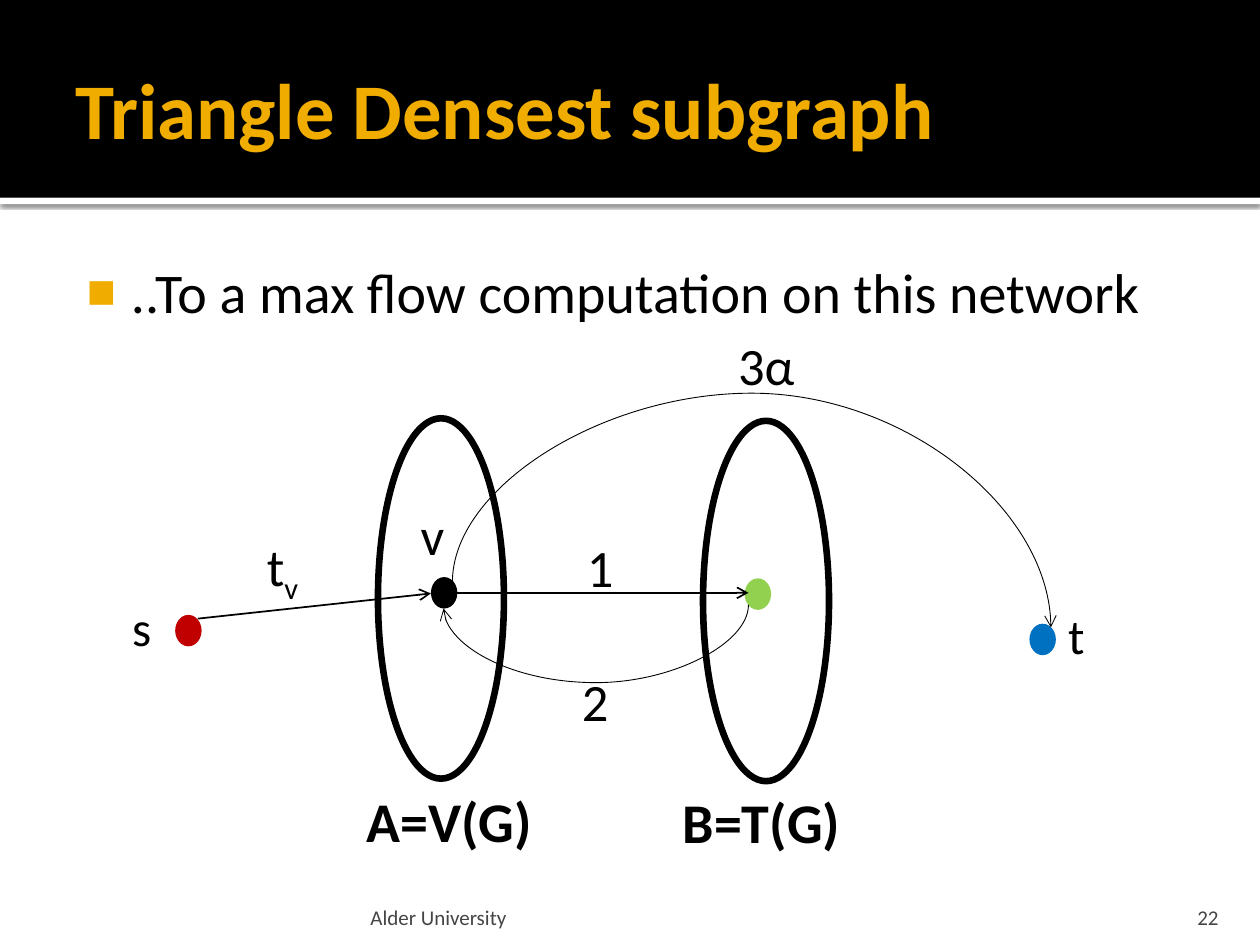
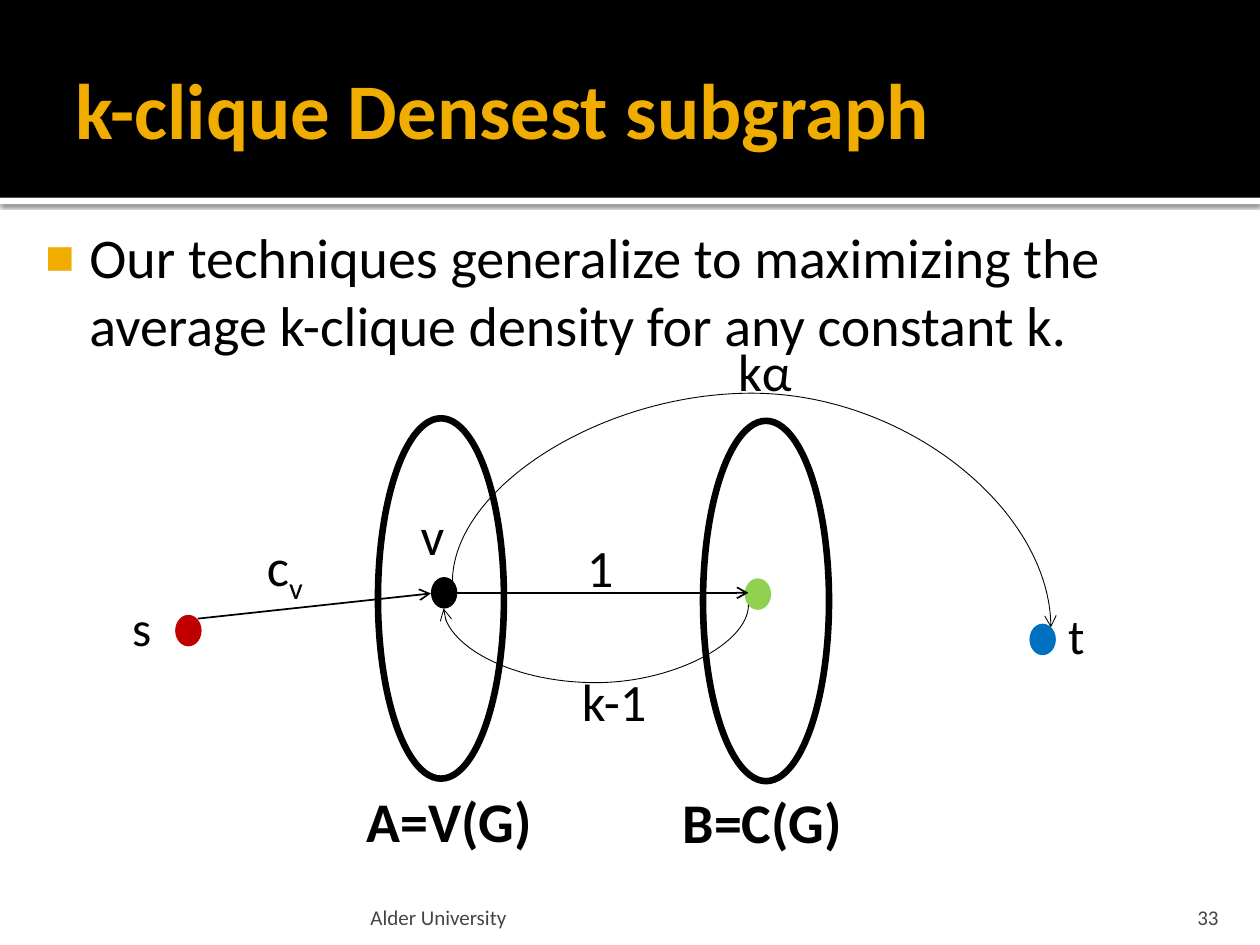
from lxml.etree import SubElement
from pptx import Presentation
from pptx.dml.color import RGBColor
from pptx.enum.shapes import MSO_CONNECTOR as Link, MSO_SHAPE as Preset
from pptx.enum.text import MSO_ANCHOR as Anchor, MSO_AUTO_SIZE as Fit, PP_ALIGN as Align
from pptx.oxml.ns import qn
from pptx.util import Inches, Pt

BLACK = RGBColor(0x00, 0x00, 0x00)
WHITE = RGBColor(0xFF, 0xFF, 0xFF)
AMBER = RGBColor(0xF0, 0xAD, 0x00)
GREY = RGBColor(0x45, 0x45, 0x45)
RED = RGBColor(0xC0, 0x00, 0x00)
GREEN = RGBColor(0x92, 0xD0, 0x50)
BLUE = RGBColor(0x00, 0x70, 0xC0)

COLUMNS, ROWS = 100, 75
BAND = 15.7
NODE = (2.1, 2.5)
SET_SIZE = (10, 28.6)


def add_xml(parent, tag, **attributes):
    return SubElement(parent, qn(tag), {key: str(value) for key, value in attributes.items()})


def set_all(target, values):
    for name, value in values.items():
        setattr(target, name, value)


class Painter:
    """Draws on the current slide, in cells of a 100 by 75 grid."""

    font = "Calibri"

    def __init__(self, deck):
        self.deck = deck
        self.page = None

    def cells(self, *lengths):
        unit = self.deck.slide_width / COLUMNS
        return [round(length * unit) for length in lengths]

    def new_page(self, title, number):
        self.page = self.deck.slides.add_slide(self.deck.slide_layouts[6])
        strip = self.shape(Preset.RECTANGLE, (0, BAND, COLUMNS, 0.5), fill=WHITE)
        self.cast_shadow(strip)
        self.shape(Preset.RECTANGLE, (0, 0, COLUMNS, BAND), fill=BLACK)
        self.text((5, 1.7, 90, 13.7), title, 45, AMBER, bold=True,
                  margins=(1, 0.5, 0.5, 0.5), anchor=Anchor.MIDDLE)
        footer = {"size": 12, "color": GREY, "anchor": Anchor.BOTTOM}
        self.text((28.9, 70.8, 60.2, 3), "Alder University",
                  margins=(0.5, 0.5, 0.5, 0), **footer)
        self.text((89.7, 70.8, 8, 3), str(number),
                  margins=(1, 0.5, 1, 0), align=Align.RIGHT, **footer)

    def shape(self, preset, area, fill=None, outline=None):
        figure = self.page.shapes.add_shape(preset, *self.cells(*area))
        figure.shadow.inherit = False
        if fill is None:
            figure.fill.background()
        else:
            figure.fill.solid()
            figure.fill.fore_color.rgb = fill
        if outline is None:
            figure.line.fill.background()
        else:
            figure.line.color.rgb = BLACK
            figure.line.width = Pt(outline)
        return figure

    def cast_shadow(self, figure):
        effects = figure.element.spPr.find(qn("a:effectLst"))
        shadow = add_xml(effects, "a:outerShdw", blurRad=Pt(2.5), dist=Pt(0.8),
                         dir=90 * 60000, algn="tl", rotWithShape=0)
        color = add_xml(shadow, "a:srgbClr", val=BLACK)
        add_xml(color, "a:alpha", val=60000)

    def text(self, area, words, size, color=BLACK, bold=False, subscript="", wrap=True,
             fit=Fit.NONE, margins=(1, 0.5, 1, 0.5), anchor=Anchor.TOP, align=Align.LEFT):
        box = self.page.shapes.add_textbox(*self.cells(*area))
        frame = box.text_frame
        sides = ("margin_left", "margin_top", "margin_right", "margin_bottom")
        set_all(frame, {"word_wrap": wrap, "auto_size": fit, "vertical_anchor": anchor,
                        **dict(zip(sides, self.cells(*margins)))})
        para = frame.paragraphs[0]
        para.alignment = align
        for part in filter(None, (words, subscript)):
            span = para.add_run()
            span.text = part
            set_all(span.font, {"name": self.font, "size": Pt(size), "bold": bold})
            span.font.color.rgb = color
        if subscript:
            span.font._element.set("baseline", "-25000")
        return para

    def bullet(self, area, words):
        para = self.text(area, words, 32, margins=(0.6, 1, 1, 0.5))
        properties = para._p.get_or_add_pPr()
        properties.set("marL", str(Inches(0.48)))
        properties.set("indent", str(Inches(-0.35)))
        add_xml(add_xml(properties, "a:buClr"), "a:srgbClr", val=AMBER)
        add_xml(properties, "a:buSzPct", val=55000)
        add_xml(properties, "a:buFont", typeface=self.font)
        add_xml(properties, "a:buChar", char="■")

    def label(self, left, top, words, width=4.2, size=30, **style):
        self.text((left, top, width, 6.1), words, size, wrap=False,
                  fit=Fit.SHAPE_TO_FIT_TEXT, **style)

    def end_label(self, left, top, words):
        self.text((left, top, 4.3, 8.8), words, 28)

    def node(self, left, top, color):
        self.shape(Preset.OVAL, (left, top, *NODE), fill=color)

    def vertex_set(self, left, top):
        self.shape(Preset.OVAL, (left, top, *SET_SIZE), outline=3.78)

    def arrow(self, start, end, kind=Link.STRAIGHT, width=1):
        link = self.page.shapes.add_connector(kind, *self.cells(*start, *end))
        link.line.color.rgb = BLACK
        link.line.width = Pt(width)
        add_xml(link.line._get_or_add_ln(), "a:tailEnd", type="arrow")
        add_xml(link.element.spPr, "a:effectLst")
        return link

    def arc(self, start, end, peak):
        """Curved arrow that leaves and arrives vertically and turns at row peak."""
        link = self.arrow(start, end, Link.CURVE, 0.5)
        (x1, y1), (x2, y2) = start, end
        width, height = abs(y2 - y1), abs(x2 - x1)
        left, top = (x1 + x2 - width) / 2, (y1 + y2 - height) / 2
        sizes = self.cells(left, top, width, height)
        set_all(link, dict(zip(("left", "top", "width", "height"), sizes)))
        rightward = x2 > x1
        frame = link.element.spPr.find(qn("a:xfrm"))
        frame.set("rot", str((270 if rightward else 90) * 60000))
        frame.set("flipH", str(int(rightward)))
        geometry = link.element.spPr.find(qn("a:prstGeom"))
        guides = geometry.find(qn("a:avLst"))
        if guides is None:
            guides = add_xml(geometry, "a:avLst")
        bend = round((peak - y1) / (y2 - y1) * 100000)
        add_xml(guides, "a:gd", name="adj1", fmla=f"val {bend}")


def draw_network(painter, source, back, sink, right_set):
    """Flow network; source, back and sink hold the varying places and words of labels."""
    painter.node(34.2, 45.8, BLACK)
    painter.vertex_set(55.8, 33.4)
    painter.node(59.1, 45.9, GREEN)
    painter.node(13.9, 48.8, RED)
    painter.node(81.7, 49.5, BLUE)
    painter.end_label(9.5, 46.9, "s")
    painter.end_label(83.8, 47.6, "t")

    painter.arrow((36, 47.05), (59.4, 47.05))
    painter.arrow((15.7, 49.1), (34.2, 47.1))
    painter.arc((35.9, 46.2), (83.4, 49.8), peak=31.2)
    painter.arc((59.4, 48), (35.2, 48.3), peak=54.2)

    painter.label(28.1, 61.9, "A=V(G)", width=15.8, size=32, bold=True)
    painter.label(53.2, 62, right_set, width=15.4, size=32, bold=True)
    painter.label(20.2, 41.9, subscript="v", **source)
    painter.label(45.2, 52.6, **back)
    painter.label(45.6, 42, "1")
    painter.label(57.6, width=6.5, **sink)
    painter.label(32.4, 39.4, "v", width=3.9)
    painter.vertex_set(30, 33.2)


def main():
    deck = Presentation()
    deck.slide_width = Inches(10)
    deck.slide_height = deck.slide_width * ROWS // COLUMNS
    painter = Painter(deck)

    painter.new_page("Triangle Densest subgraph", 22)
    painter.bullet((5, 19.4, 90, 50.6), "..To a max flow computation on this network")
    draw_network(painter, source={"words": "t", "width": 4.7},
                 back={"words": "2", "width": 4.2},
                 sink={"words": "3α", "top": 25.9}, right_set="B=T(G)")

    painter.new_page("k-clique Densest subgraph", 33)
    painter.bullet((1.7, 16.7, 93.3, 53.3),
                   "Our techniques generalize to maximizing the average "
                   "k-clique density for any constant k.")
    draw_network(painter, source={"words": "c", "width": 5.2},
                 back={"words": "k-1", "width": 7.4},
                 sink={"words": "kα", "top": 26.4}, right_set="B=C(G)")

    deck.save("out.pptx")


if __name__ == "__main__":
    main()
